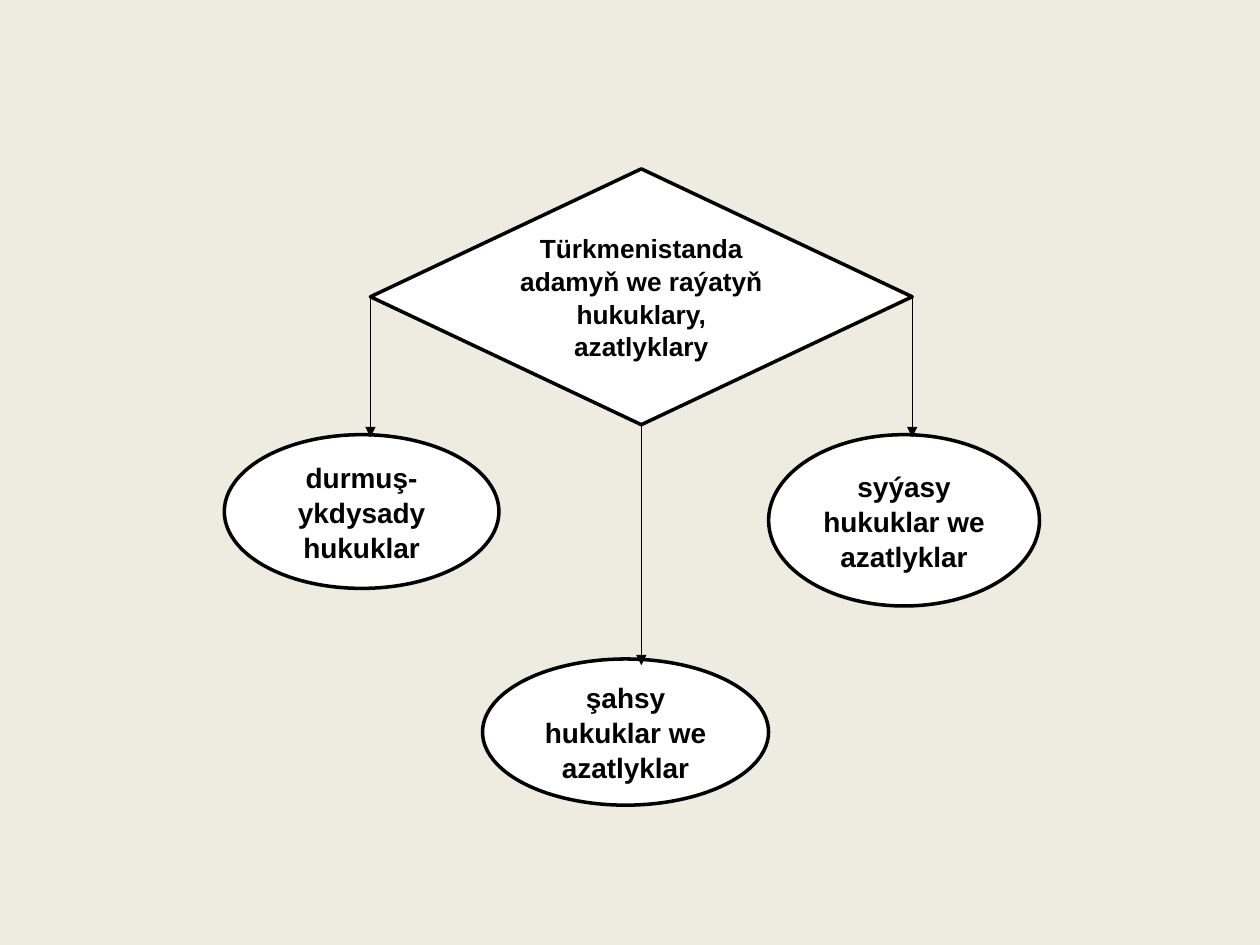
import pptx
import pptx.util
import pptx.dml.color
import pptx.enum.shapes
import pptx.enum.text
import pptx.oxml.ns
import lxml.etree

COLORS = {"background": "EEECE1", "node": "FFFFFF", "ink": "000000"}
SHAPES = pptx.enum.shapes.MSO_SHAPE
LEFT, BOTTOM, RIGHT = 1, 2, 3
LINE_SPACING = 1.04

# Boxes are left, top, width, height in percent of the slide.
TOPIC_BOX = (29.4, 17.87, 43, 27.07)
TOPIC_TEXT = "Türkmenistanda adamyň we raýatyň hukuklary, azatlyklary"
# Each branch: text, box, diamond corner its arrow leaves, arrow end height.
BRANCHES = [
    ("durmuş-ykdysady hukuklar", (17.8, 46, 21.8, 16.27), LEFT, 46.27),
    ("şahsy hukuklar we azatlyklar", (38.3, 69.73, 22.7, 15.47), BOTTOM, 70.4),
    ("syýasy hukuklar we azatlyklar", (61, 46, 21.5, 18.13), RIGHT, 46.27),
]


def rgb(name):
    return pptx.dml.color.RGBColor.from_string(COLORS[name])


def add_node(slide, kind, box, size, text, font_size):
    """Add an outlined shape with centred bold text; box is in percent of size."""
    sp = slide.shapes.add_shape(
        kind, *(int(share * size[i % 2] / 100) for i, share in enumerate(box)))
    sp.shadow.inherit = False
    sp.fill.solid()
    sp.fill.fore_color.rgb = rgb("node")
    sp.line.color.rgb = rgb("ink")
    sp.line.width = pptx.util.Pt(2)
    tf = sp.text_frame
    tf.word_wrap = True
    tf.vertical_anchor = pptx.enum.text.MSO_ANCHOR.MIDDLE
    p = tf.paragraphs[0]
    p.alignment = pptx.enum.text.PP_ALIGN.CENTER
    p.line_spacing = LINE_SPACING
    r = p.add_run()
    r.text = text
    font = {"name": "Arial", "size": pptx.util.Pt(font_size), "bold": True}
    for key, value in font.items():
        setattr(r.font, key, value)
    r.font.color.rgb = rgb("ink")
    return sp


def add_down_arrow(slide, start, corner, end_y):
    """Drop a vertical arrow from a corner of the start shape to end_y."""
    cxn = slide.shapes.add_connector(
        pptx.enum.shapes.MSO_CONNECTOR.STRAIGHT, 0, 0, 0, 0)
    cxn.begin_connect(start, corner)
    cxn.end_x, cxn.end_y = cxn.begin_x, end_y
    cxn.line.color.rgb = rgb("ink")
    cxn.line.width = pptx.util.Pt(0.75)
    qn = pptx.oxml.ns.qn
    lxml.etree.SubElement(cxn.line._get_or_add_ln(), qn("a:tailEnd"), type="triangle")
    lxml.etree.SubElement(cxn._element.spPr, qn("a:effectLst"))


def add_rights_diagram(slide, size):
    topic = add_node(slide, SHAPES.DIAMOND, TOPIC_BOX, size, TOPIC_TEXT, 15)
    for text, box, _, _ in BRANCHES:
        add_node(slide, SHAPES.OVAL, box, size, text, 16)
    for _, _, corner, end in BRANCHES:
        add_down_arrow(slide, topic, corner, int(end * size[1] / 100))


def main():
    prs = pptx.Presentation()
    prs.slide_width = pptx.util.Inches(10)
    prs.slide_height = pptx.util.Inches(7.5)
    s = prs.slides.add_slide(prs.slide_layouts[6])
    s.background.fill.solid()
    s.background.fill.fore_color.rgb = rgb("background")
    add_rights_diagram(s, (prs.slide_width, prs.slide_height))
    prs.save("out.pptx")


if __name__ == "__main__":
    main()
